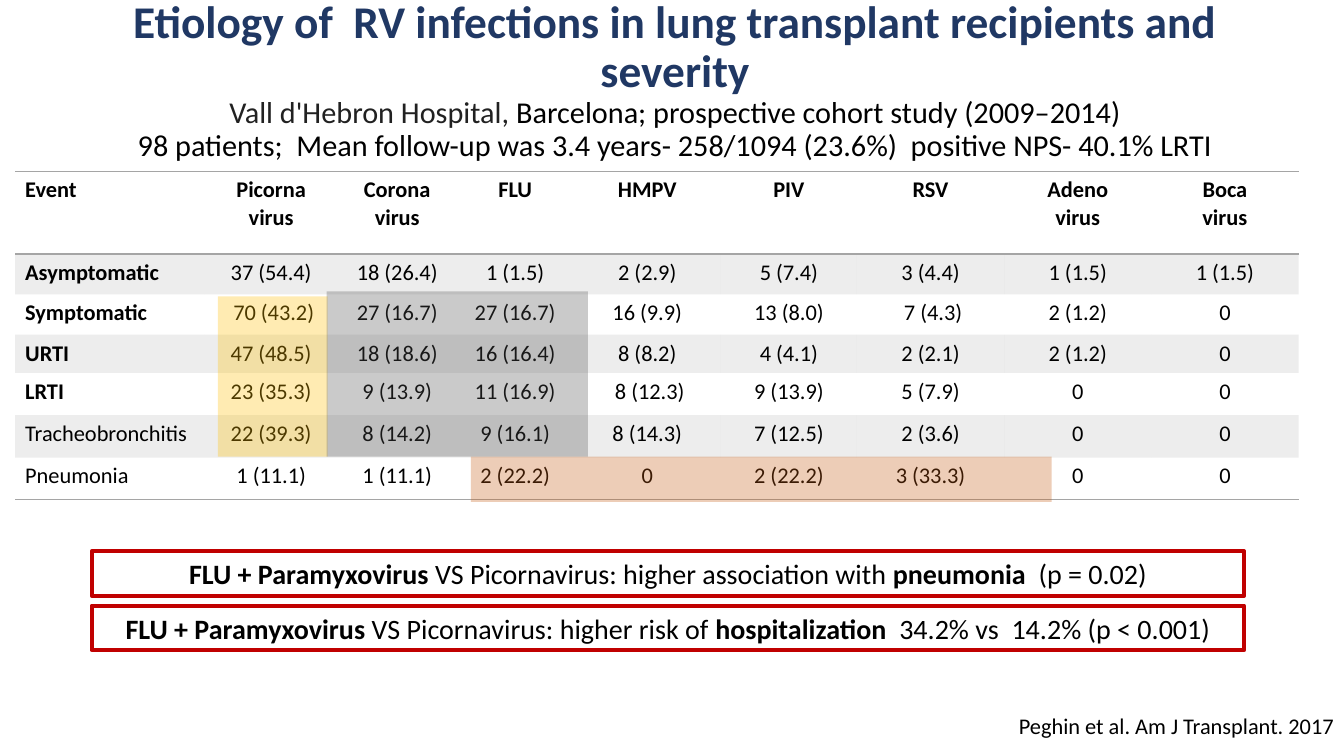
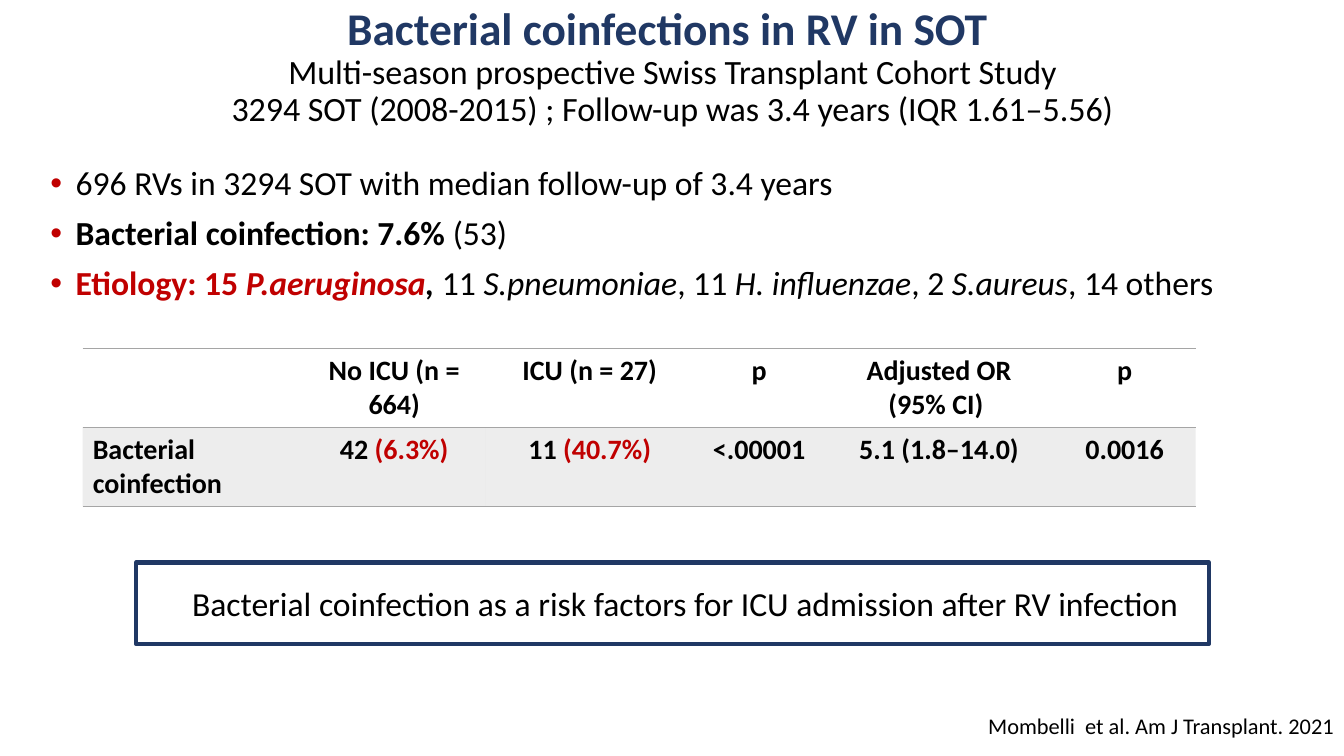
from dataclasses import dataclass
from typing import Any, NamedTuple

from lxml.etree import SubElement
from pptx import Presentation
from pptx.dml.color import RGBColor
from pptx.enum.shapes import MSO_SHAPE
from pptx.enum.text import MSO_ANCHOR, MSO_AUTO_SIZE, PP_ALIGN
from pptx.oxml.ns import qn
from pptx.util import Pt

EMU_PER_PX = 9144
FONT = "Calibri"
NO_GRID_STYLE = "{2D5ABB26-0587-4C30-8999-92F81FD0307C}"

NAVY = RGBColor(0x20, 0x38, 0x64)
RED = RGBColor(0xC0, 0x00, 0x00)
BLACK = RGBColor(0x00, 0x00, 0x00)
CHARCOAL = RGBColor(0x21, 0x21, 0x21)
WHITE = RGBColor(0xFF, 0xFF, 0xFF)
GREY = RGBColor(0xA5, 0xA5, 0xA5)
SLATE = RGBColor(0x52, 0x52, 0x52)
AMBER = RGBColor(0xFF, 0xC0, 0x00)
RUST = RGBColor(0xC5, 0x5A, 0x11)


class Box(NamedTuple):
    left: int
    top: int
    width: int
    height: int


class Span(NamedTuple):
    text: str
    size: float
    bold: bool = False
    color: RGBColor = BLACK
    italic: bool = False


Line = list[Span]


@dataclass(frozen=True)
class Panel:
    box: Box
    line: Line
    fill: RGBColor | None = None
    border: RGBColor = WHITE
    border_width: float = 3
    align: PP_ALIGN = PP_ALIGN.CENTER
    margin_left: int = 10


@dataclass(frozen=True)
class Highlight:
    box: Box
    color: RGBColor


@dataclass(frozen=True)
class Grid:
    left: int
    top: int
    columns: list[int]
    rows: list[int]
    cells: list[list[list[Line]]]


CITATION_BOX = Box(667, 690, 666, 60)


def px(length: int) -> int:
    return length * EMU_PER_PX


def emu(box: Box) -> list[int]:
    return [px(length) for length in box]


def apply(target: Any, values: dict[str, Any]) -> None:
    for attribute, value in values.items():
        setattr(target, attribute, value)


def set_opacity(parent: Any, percent: int) -> None:
    color = parent.find(".//" + qn("a:srgbClr"))
    SubElement(color, qn("a:alpha"), val=str(percent * 1000))


def write_lines(frame: Any, lines: list[Line], align: PP_ALIGN,
                spacing: float = 1.0, after: float = 0) -> None:
    frame.word_wrap = True
    for index, line in enumerate(lines):
        paragraph = frame.paragraphs[0] if index == 0 else frame.add_paragraph()
        apply(paragraph, {"alignment": align, "line_spacing": spacing,
                          "space_before": Pt(0), "space_after": Pt(after)})
        for span in line:
            run = paragraph.add_run()
            run.text = span.text
            apply(run.font, {"name": FONT, "size": Pt(span.size),
                             "bold": span.bold, "italic": span.italic})
            run.font.color.rgb = span.color


def fill_placeholder(placeholder: Any, box: Box, anchor: MSO_ANCHOR) -> Any:
    apply(placeholder, dict(zip(("left", "top", "width", "height"), emu(box))))
    apply(placeholder.text_frame, {"auto_size": MSO_AUTO_SIZE.NONE,
                                   "vertical_anchor": anchor})
    return placeholder.text_frame


def add_title(slide: Any, box: Box, headings: list[str], details: list[Line]) -> None:
    frame = fill_placeholder(slide.shapes.title, box, MSO_ANCHOR.MIDDLE)
    lines = [[Span(heading, 32.4, True, NAVY)] for heading in headings] + details
    write_lines(frame, lines, PP_ALIGN.CENTER, 0.9)


def add_bullets(slide: Any, box: Box, lines: list[Line]) -> None:
    frame = fill_placeholder(slide.placeholders[1], box, MSO_ANCHOR.TOP)
    write_lines(frame, lines, PP_ALIGN.LEFT, 0.9, 10)
    for paragraph in frame.paragraphs:
        properties = paragraph._p.get_or_add_pPr()
        properties.set("marL", str(px(25)))
        properties.set("indent", str(-px(25)))
        bullet_color = SubElement(properties, qn("a:buClr"))
        SubElement(bullet_color, qn("a:srgbClr"), val=str(RED))
        SubElement(properties, qn("a:buFont"), typeface="Arial")
        SubElement(properties, qn("a:buChar"), char="•")


def add_rectangle(slide: Any, box: Box) -> Any:
    rectangle = slide.shapes.add_shape(MSO_SHAPE.RECTANGLE, *emu(box))
    rectangle.shadow.inherit = False
    return rectangle


def add_panel(slide: Any, panel: Panel) -> None:
    rectangle = add_rectangle(slide, panel.box)
    if panel.fill is None:
        rectangle.fill.background()
    else:
        rectangle.fill.solid()
        rectangle.fill.fore_color.rgb = panel.fill
    rectangle.line.color.rgb = panel.border
    rectangle.line.width = Pt(panel.border_width)
    apply(rectangle.text_frame, {"vertical_anchor": MSO_ANCHOR.MIDDLE,
                                 "margin_left": px(panel.margin_left)})
    write_lines(rectangle.text_frame, [panel.line], panel.align)


def add_citation(slide: Any, source: str) -> None:
    add_panel(slide, Panel(CITATION_BOX, [Span(source, 16)], WHITE,
                           border_width=1, align=PP_ALIGN.RIGHT))


def add_highlight(slide: Any, highlight: Highlight) -> None:
    rectangle = add_rectangle(slide, highlight.box)
    rectangle.fill.solid()
    rectangle.fill.fore_color.rgb = highlight.color
    set_opacity(rectangle._element.spPr, 30)
    rectangle.line.fill.background()


def add_rules(cell: Any, sides: list[str]) -> None:
    properties = cell._tc.get_or_add_tcPr()
    for position, side in enumerate(sides):
        rule = SubElement(properties, qn(f"a:{side}"), w=str(Pt(1)))
        fill = SubElement(rule, qn("a:solidFill"))
        SubElement(fill, qn("a:srgbClr"), val=str(GREY))
        properties.insert(position, rule)


def add_grid(slide: Any, grid: Grid) -> None:
    box = Box(grid.left, grid.top, sum(grid.columns), sum(grid.rows))
    table = slide.shapes.add_table(len(grid.rows), len(grid.columns), *emu(box)).table
    table.horz_banding = False
    table._tbl.tblPr.find(qn("a:tableStyleId")).text = NO_GRID_STYLE
    for column, width in zip(table.columns, grid.columns):
        column.width = px(width)
    last_row = len(grid.rows) - 1
    for r, row in enumerate(grid.cells):
        table.rows[r].height = px(grid.rows[r])
        sides = ["lnT"] if r == 0 else []
        if r in (0, last_row):
            sides.append("lnB")
        for c, lines in enumerate(row):
            cell = table.cell(r, c)
            if r % 2:
                cell.fill.solid()
                cell.fill.fore_color.rgb = GREY
                set_opacity(cell._tc.tcPr, 20)
            else:
                cell.fill.background()
            add_rules(cell, sides)
            write_lines(cell.text_frame, lines, PP_ALIGN.CENTER if c else PP_ALIGN.LEFT)


def cell_lines(text: str, size: float, bold: bool) -> list[Line]:
    return [[Span(part, size, bold)] for part in text.split("\n")] if text else []


def build_etiology(deck: Any) -> None:
    slide = deck.slides.add_slide(deck.slide_layouts[5])
    add_title(
        slide, Box(67, 8, 1205, 145),
        ["Etiology of  RV infections in lung transplant recipients and severity"],
        [[Span("Vall d'Hebron Hospital, ", 21.6, color=CHARCOAL),
          Span("Barcelona; prospective cohort study (2009–2014)", 21.6)],
         [Span("98 patients;  Mean follow-up was 3.4 years- 258/1094 (23.6%)"
               "  positive NPS- 40.1% LRTI", 21.6)]])
    events = [
        ["Event", "Picorna\nvirus", "Corona\nvirus", "FLU", "HMPV", "PIV", "RSV",
         "Adeno\nvirus", "Boca\nvirus"],
        ["Asymptomatic", "37 (54.4)", "18 (26.4)", "1 (1.5)", "2 (2.9)", "5 (7.4)",
         "3 (4.4)", "1 (1.5)", "1 (1.5)"],
        ["Symptomatic", " 70 (43.2)", "27 (16.7)", "27 (16.7)", "16 (9.9)", "13 (8.0)",
         " 7 (4.3)", "2 (1.2)", "0"],
        ["URTI", "47 (48.5)", "18 (18.6)", "16 (16.4)", "8 (8.2)", "4 (4.1)",
         "2 (2.1)", "2 (1.2)", "0"],
        ["LRTI", "23 (35.3)", "9 (13.9)", "11 (16.9)", " 8 (12.3)", "9 (13.9)",
         "5 (7.9)", "0", "0"],
        ["Tracheobronchitis", "22 (39.3)", "8 (14.2)", "9 (16.1)", "8 (14.3)",
         "7 (12.5)", "2 (3.6)", "0", "0"],
        ["Pneumonia", "1 (11.1)", "1 (11.1)", "2 (22.2)", "0", "2 (22.2)",
         "3 (33.3)", "0", "0"],
    ]
    add_grid(slide, Grid(
        15, 170, [188, 132, 118, 116, 146, 135, 146, 146, 146],
        [82, 40, 40, 38, 42, 42, 42],
        [[cell_lines(text, 16, r == 0 or (c == 0 and r < 5))
          for c, text in enumerate(row)] for r, row in enumerate(events)]))
    for highlight in (Highlight(Box(216, 294, 109, 159), AMBER),
                      Highlight(Box(324, 289, 259, 164), SLATE),
                      Highlight(Box(467, 453, 576, 45), RUST)):
        add_highlight(slide, highlight)
    findings = [
        ("higher association with ", "pneumonia", "  (p = 0.02)"),
        ("higher risk of ", "hospitalization", "  34.2% vs  14.2% (p < 0.001)"),
    ]
    for index, (relation, outcome, evidence) in enumerate(findings):
        add_panel(slide, Panel(
            Box(91, 547 + 54 * index, 1143, 44),
            [Span("FLU + Paramyxovirus ", 20, True),
             Span(f"VS Picornavirus: {relation}", 20),
             Span(outcome, 20, True), Span(evidence, 20)], border=RED))
    add_citation(slide, "Peghin et al. Am J Transplant. 2017")


def build_coinfections(deck: Any) -> None:
    slide = deck.slides.add_slide(deck.slide_layouts[1])
    add_title(
        slide, Box(92, 0, 1150, 134), ["Bacterial coinfections in RV in SOT "],
        [[Span("Multi-season prospective Swiss Transplant Cohort Study", 24.3)],
         [Span("3294 SOT (2008-2015) ; Follow-up was 3.4 years (IQR 1.61–5.56)", 24.3)]])
    add_bullets(slide, Box(40, 160, 1266, 170), [
        [Span("696 RVs in 3294 SOT with median follow-up of 3.4 years", 24)],
        [Span("Bacterial coinfection: 7.6% ", 24, True), Span("(53)", 24)],
        [Span("Etiology: 15 ", 24, True, RED),
         Span("P.aeruginosa", 24, True, RED, True), Span(", ", 24, True, italic=True),
         Span("11 ", 24), Span("S.pneumoniae", 24, italic=True),
         Span(", 11 ", 24), Span("H. influenzae", 24, italic=True),
         Span(", 2 ", 24), Span("S.aureus", 24, italic=True),
         Span(", 14 others", 24)],
    ])
    header = ["", "No ICU (n = 664)", "ICU (n = 27)", "p", "Adjusted OR (95% CI) ", "p"]
    rates = [[[Span(count, 20, True), Span(share, 20, True, RED)]]
             for count, share in (("42 ", "(6.3%)"), ("11 ", "(40.7%)"))]
    statistics = [cell_lines(text, 20, True)
                  for text in ("<.00001", "5.1 (1.8–14.0)", "0.0016")]
    add_grid(slide, Grid(
        82, 346, [218, 182, 206, 130, 227, 141], [78, 78],
        [[cell_lines(text, 20, True) for text in header],
         [cell_lines("Bacterial coinfection", 20, True), *rates, *statistics]]))
    add_panel(slide, Panel(
        Box(135, 558, 1064, 81),
        [Span("Bacterial coinfection as a risk factors for ICU admission "
              "after RV infection", 24)],
        WHITE, NAVY, margin_left=35))
    add_citation(slide, "Mombelli  et al. Am J Transplant. 2021")


def main() -> None:
    deck = Presentation()
    apply(deck, {"slide_width": px(1333), "slide_height": px(750)})
    build_etiology(deck)
    build_coinfections(deck)
    deck.save("out.pptx")


if __name__ == "__main__":
    main()
